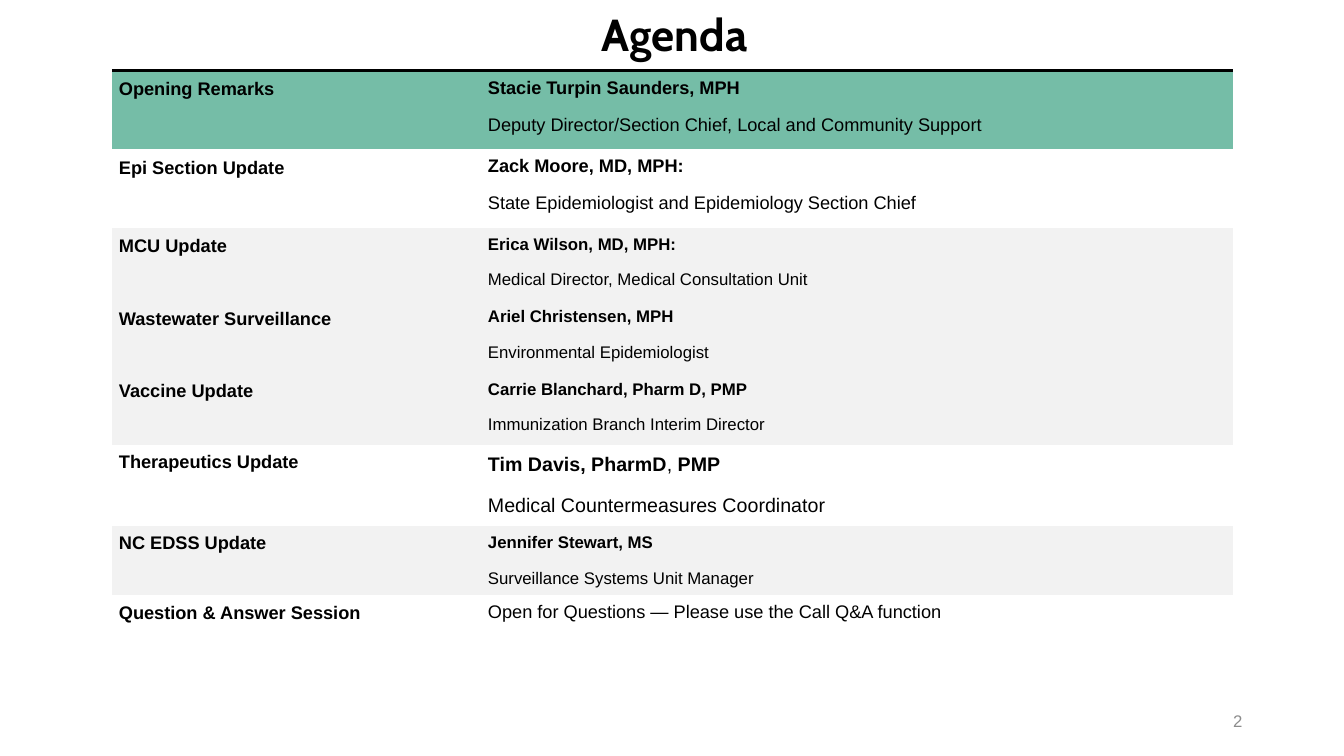
import pptx
import pptx.util
import pptx.dml.color
import pptx.enum.text
import pptx.oxml
import pptx.oxml.ns
import pptx.slide
import pptx.table
import pptx.text.text
from dataclasses import dataclass
from typing import Optional

Inches = pptx.util.Inches
Pt = pptx.util.Pt

COLORS = {"text": "000000", "number": "8C8C8C", "current": "75BDA7", "band": "F2F2F2"}
NO_STYLE = "{2D5ABB26-0587-4C30-8999-92F81FD0307C}"
COLUMN_WIDTHS = (3.66, 7.46)
LOOSE = 1.07


@dataclass
class AgendaItem:
    topic: str
    speaker: str
    role: str
    height: float
    size: int = 12
    fill: Optional[str] = None
    topic_spacing: float = LOOSE
    speaker_spacing: float = 1.0
    credential: str = ""


AGENDA = [
    AgendaItem("Opening Remarks", "Stacie Turpin Saunders, MPH",
               "Deputy Director/Section Chief, Local and Community Support", 0.78, 13, "current"),
    AgendaItem("Epi Section Update", "Zack Moore, MD, MPH:",
               "State Epidemiologist and Epidemiology Section Chief", 0.78, 13),
    AgendaItem("MCU Update", "Erica Wilson, MD, MPH:",
               "Medical Director, Medical Consultation Unit", 0.72, fill="band"),
    AgendaItem("Wastewater Surveillance", "Ariel Christensen, MPH",
               "Environmental Epidemiologist", 0.72, fill="band"),
    AgendaItem("Vaccine Update", "Carrie Blanchard, Pharm D, PMP",
               "Immunization Branch Interim Director", 0.72, fill="band"),
    AgendaItem("Therapeutics Update", "Tim Davis, PharmD", "Medical Countermeasures Coordinator",
               0.8, 14, None, 1.0, LOOSE, "PMP"),
    AgendaItem("NC EDSS Update", "Jennifer Stewart, MS",
               "Surveillance Systems Unit Manager", 0.68, fill="band", topic_spacing=1.0),
    AgendaItem("Question & Answer Session", "",
               "Open for Questions — Please use the Call Q&A function", 0.4, 13),
]


def rgb(name: str) -> pptx.dml.color.RGBColor:
    return pptx.dml.color.RGBColor.from_string(COLORS[name])


def set_font(paragraph: pptx.text.text._Paragraph, size: int, bold: Optional[bool] = None,
             color: str = "text", name: str = "Arial") -> None:
    font = paragraph.font
    font.name, font.size, font.bold = name, Pt(size), bold
    font.color.rgb = rgb(color)


def format_cell(cell: pptx.table._Cell, fill: Optional[str]) -> None:
    cell.margin_left = cell.margin_right = Inches(0.07)
    cell.margin_top = cell.margin_bottom = Inches(0.07)
    if fill:
        cell.fill.solid()
        cell.fill.fore_color.rgb = rgb(fill)
    else:
        cell.fill.background()


def add_top_border(cell: pptx.table._Cell) -> None:
    border = pptx.oxml.parse_xml(
        f'<a:lnT {pptx.oxml.ns.nsdecls("a")} w="{Pt(2.25)}"><a:solidFill>'
        f'<a:srgbClr val="{COLORS["text"]}"/></a:solidFill></a:lnT>')
    cell._tc.get_or_add_tcPr().insert(0, border)


def space(paragraph: pptx.text.text._Paragraph, line_spacing: float, first: bool) -> None:
    paragraph.line_spacing = line_spacing
    paragraph.space_before = Pt(0 if first else 6)
    paragraph.space_after = Pt(6)


def fill_row(table: pptx.table.Table, row: int, item: AgendaItem) -> None:
    table.rows[row].height = Inches(item.height)
    topic_cell, speaker_cell = table.cell(row, 0), table.cell(row, 1)
    for cell in (topic_cell, speaker_cell):
        format_cell(cell, item.fill)

    topic = topic_cell.text_frame.paragraphs[0]
    topic.text = item.topic
    space(topic, item.topic_spacing, True)
    set_font(topic, 13, True)

    # Speaker in bold, then the role
    frame = speaker_cell.text_frame
    lines = [(text, bold) for text, bold in ((item.speaker, True), (item.role, False)) if text]
    for index, (text, bold) in enumerate(lines):
        paragraph = frame.paragraphs[0] if index == 0 else frame.add_paragraph()
        paragraph.text = text
        space(paragraph, item.speaker_spacing, index == 0)
        set_font(paragraph, item.size, bold)
    if item.credential:
        paragraph = frame.paragraphs[0]
        comma = paragraph.add_run()
        comma.text, comma.font.bold = ", ", False
        paragraph.add_run().text = item.credential


def add_agenda(slide: pptx.slide.Slide) -> None:
    frame = slide.shapes.add_table(len(AGENDA), 2, Inches(1.11), Inches(0.7), Inches(11.12),
                                   Inches(sum(item.height for item in AGENDA)))
    table = frame.table
    table.first_row = table.horz_banding = False
    for style in frame.element.iter(pptx.oxml.ns.qn("a:tableStyleId")):
        style.text = NO_STYLE
    for column, width in zip(table.columns, COLUMN_WIDTHS):
        column.width = Inches(width)
    for row, item in enumerate(AGENDA):
        fill_row(table, row, item)
    for column in range(len(COLUMN_WIDTHS)):
        add_top_border(table.cell(0, column))


def add_title(slide: pptx.slide.Slide) -> None:
    title = slide.shapes.title
    title.left, title.top = Inches(5.87), Inches(0.02)
    title.width, title.height = Inches(1.72), Inches(0.64)
    frame = title.text_frame
    frame.text = "Agenda"
    frame.word_wrap = False
    frame.auto_size = pptx.enum.text.MSO_AUTO_SIZE.NONE
    frame.vertical_anchor = pptx.enum.text.MSO_ANCHOR.TOP
    frame.paragraphs[0].alignment = pptx.enum.text.PP_ALIGN.LEFT
    set_font(frame.paragraphs[0], 32, True, name="Cabin")


def add_slide_number(slide: pptx.slide.Slide) -> None:
    box = slide.shapes.add_textbox(Inches(9.42), Inches(6.95), Inches(3), Inches(0.4))
    frame = box.text_frame
    frame.word_wrap = True
    frame.vertical_anchor = pptx.enum.text.MSO_ANCHOR.MIDDLE
    frame.text = "2"
    frame.paragraphs[0].alignment = pptx.enum.text.PP_ALIGN.RIGHT
    set_font(frame.paragraphs[0], 12, color="number")


def main() -> None:
    presentation = pptx.Presentation()
    presentation.slide_width, presentation.slide_height = Inches(13.33), Inches(7.5)
    slide = presentation.slides.add_slide(presentation.slide_layouts[5])
    add_title(slide)
    add_agenda(slide)
    add_slide_number(slide)
    presentation.save("out.pptx")


if __name__ == "__main__":
    main()
